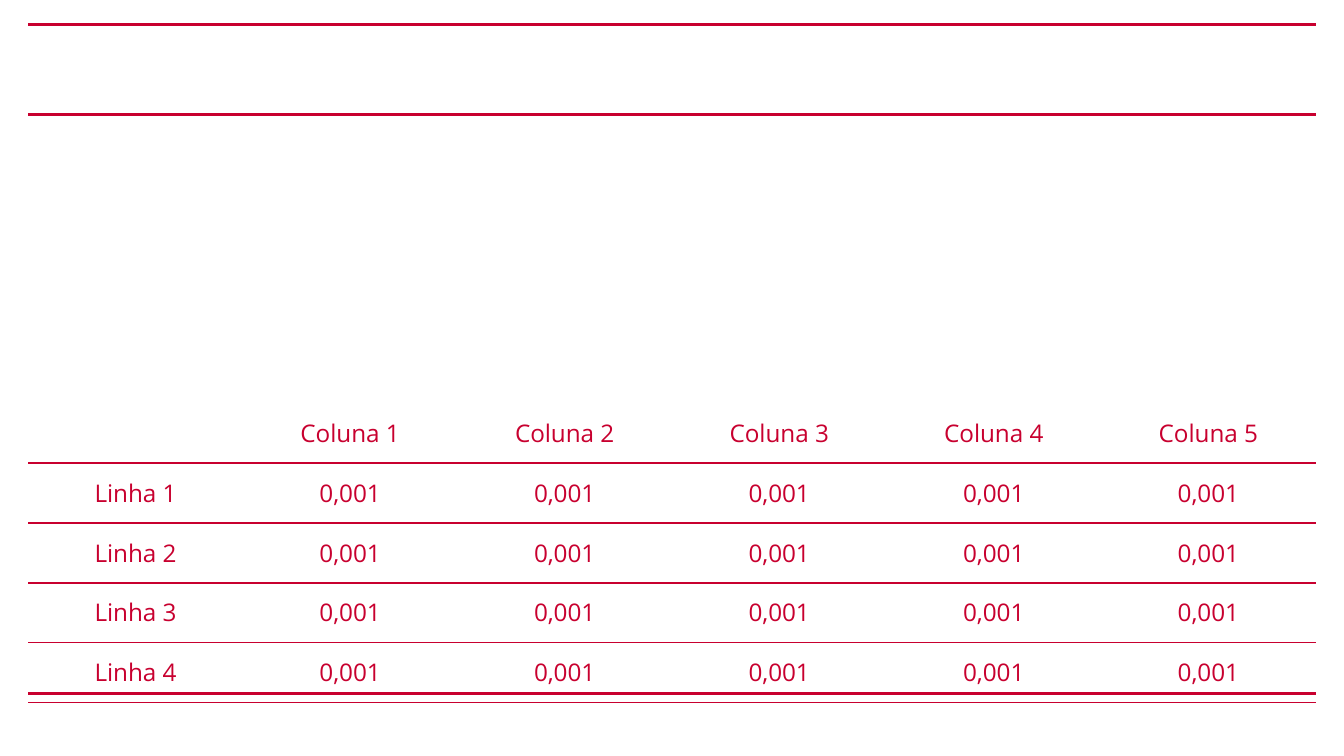
from lxml import etree
from pptx import Presentation
from pptx.dml.color import RGBColor
from pptx.enum.shapes import MSO_CONNECTOR
from pptx.enum.text import PP_ALIGN
from pptx.oxml.ns import qn
from pptx.util import Inches, Pt

CENTER = PP_ALIGN.CENTER
STRAIGHT = MSO_CONNECTOR.STRAIGHT
COLORS = {"red": "C8002F"}
RED = RGBColor.from_string(COLORS["red"])

COLUMNS = [f"Coluna {number}" for number in range(1, 6)]
ROWS = [[f"Linha {number}"] + ["0,001"] * len(COLUMNS) for number in range(1, 5)]
TABLE = [[""] + COLUMNS] + ROWS

SLIDE_WIDTH = Inches(10)
SLIDE_HEIGHT = SLIDE_WIDTH * 9 // 16
RULE_HEIGHTS = [5.16, 0.18, 0.85]
LEFT, RIGHT = 0.21, 9.79
TABLE_TOP, ROW_HEIGHT = 3, 0.43
TABLE_WIDTH = RIGHT - LEFT
FONT = {"name": "Open Sans", "size": Pt(13), "bold": False}
MARGINS = dict.fromkeys(
    ["margin_left", "margin_right", "margin_top", "margin_bottom"], Inches(0.1))


def set_attributes(target, values):
    for name, value in values.items():
        setattr(target, name, value)


def add_rule(slide, height):
    rule = slide.shapes.add_connector(
        STRAIGHT, Inches(LEFT), Inches(height), Inches(RIGHT), Inches(height))
    rule.line.color.rgb = RED
    rule.line.width = Pt(1.5)
    etree.SubElement(rule._element.spPr, qn("a:effectLst"))


def set_borders(cell, visible):
    """Draw the visible sides in red and clear the others."""
    properties = cell._tc.get_or_add_tcPr()
    for position, side in enumerate(["lnL", "lnR", "lnT", "lnB"]):
        border = etree.Element(qn(f"a:{side}"), w=str(Pt(1)))
        if side in visible:
            fill = etree.SubElement(border, qn("a:solidFill"))
            etree.SubElement(fill, qn("a:srgbClr"), val=COLORS["red"])
        else:
            etree.SubElement(border, qn("a:noFill"))
        properties.insert(position, border)


def fill_cell(cell, text, visible_borders):
    cell.fill.background()
    set_borders(cell, visible_borders)
    if not text:
        return
    set_attributes(cell, MARGINS)
    paragraph = cell.text_frame.paragraphs[0]
    paragraph.alignment = CENTER
    run = paragraph.add_run()
    run.text = text
    set_attributes(run.font, FONT)
    run.font.color.rgb = RED


def add_data_table(slide):
    table = slide.shapes.add_table(
        len(TABLE), len(TABLE[0]), Inches(LEFT), Inches(TABLE_TOP),
        Inches(TABLE_WIDTH), Inches(ROW_HEIGHT * len(TABLE))).table
    set_attributes(table, {"first_row": False, "horz_banding": False})
    for column in table.columns:
        column.width = Inches(TABLE_WIDTH / len(TABLE[0]))
    for row_index, row in enumerate(TABLE):
        borders = ["lnT", "lnB"] if row_index else ["lnB"]
        for column_index, text in enumerate(row):
            fill_cell(table.cell(row_index, column_index), text, borders)


def main():
    presentation = Presentation()
    presentation.slide_width = SLIDE_WIDTH
    presentation.slide_height = SLIDE_HEIGHT
    slide = presentation.slides.add_slide(presentation.slide_layouts[6])
    for height in RULE_HEIGHTS:
        add_rule(slide, height)
    add_data_table(slide)
    presentation.save("out.pptx")


if __name__ == "__main__":
    main()
